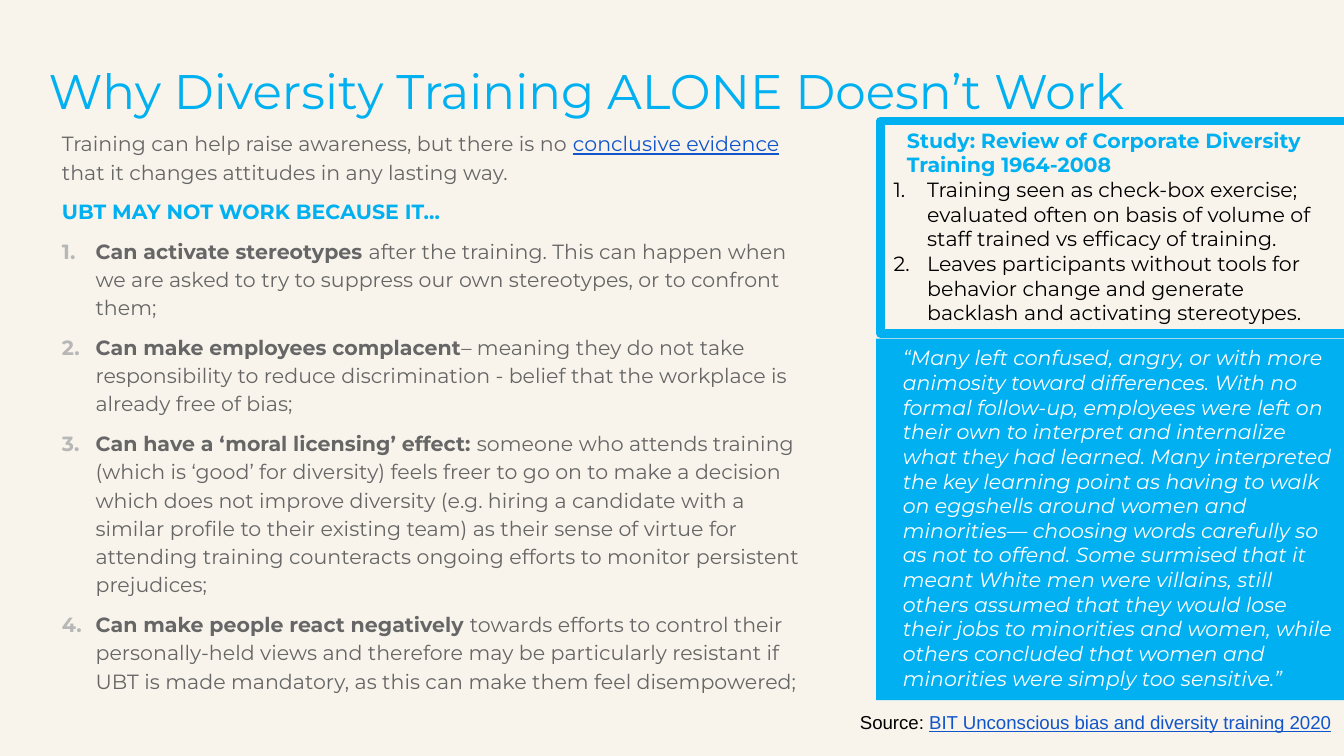
from lxml.etree import SubElement
from pptx import Presentation
from pptx.dml.color import RGBColor
from pptx.enum.shapes import MSO_SHAPE
from pptx.enum.text import MSO_ANCHOR, MSO_AUTO_SIZE, PP_ALIGN
from pptx.oxml.ns import qn
from pptx.util import Pt

CYAN, GREY, LINK = "00B0F0", "666666", "1155CC"
FONT = "Montserrat"


def color(hex_value):
    return RGBColor.from_string(hex_value)


def write(frame, paragraphs, font=FONT, size=11, line_spacing=1.0, gap=0):
    """Fill frame with (layout, runs); layout holds margin, hang and number colour."""
    frame.word_wrap = True
    frame.vertical_anchor = MSO_ANCHOR.TOP
    for index, (layout, runs) in enumerate(paragraphs):
        paragraph = frame.add_paragraph() if index else frame.paragraphs[0]
        paragraph.alignment = PP_ALIGN.LEFT
        paragraph.line_spacing = line_spacing
        paragraph.space_before = Pt(gap if index else 0)
        margin, hang, number_color = layout
        properties = paragraph._p.get_or_add_pPr()
        properties.set("marL", str(Pt(margin)))
        properties.set("indent", str(Pt(-hang)))
        if number_color:
            bullet_color = SubElement(properties, qn("a:buClr"))
            SubElement(bullet_color, qn("a:srgbClr"), val=number_color)
            SubElement(properties, qn("a:buFont"), typeface=font)
            SubElement(properties, qn("a:buAutoNum"), type="arabicPeriod")
        for text, hex_value, style in runs:
            run = paragraph.add_run()
            run.text = text
            run.font.color.rgb = color(hex_value)
            for attribute, value in {"name": font, "size": Pt(size), **style}.items():
                setattr(run.font, attribute, value)


BOLD, ITALIC, UNDERLINE = {"bold": True}, {"italic": True}, {"underline": True}
PLAIN = (7.2, 0, None)

presentation = Presentation()
presentation.slide_width, presentation.slide_height = Pt(720), Pt(405)
slide = presentation.slides.add_slide(presentation.slide_layouts[5])
slide.background.fill.solid()
slide.background.fill.fore_color.rgb = color("F8F4EB")

# Reasons
reasons = slide.shapes.add_textbox(Pt(26), Pt(68.4), Pt(409.7), Pt(327))
no_margins = dict.fromkeys(
    ["margin_left", "margin_top", "margin_right", "margin_bottom"], 0)
for attribute, value in no_margins.items():
    setattr(reasons.text_frame, attribute, value)
effects = [
    ("Can activate stereotypes ",
     "after the training. This can happen when we are asked to try to suppress "
     "our own stereotypes, or to confront them;"),
    ("Can make employees complacent",
     "– meaning they do not take responsibility to reduce discrimination - "
     "belief that the workplace is already free of bias;"),
    ("Can have a ‘moral licensing’ effect: ",
     "someone who attends training (which is ‘good’ for diversity) feels freer "
     "to go on to make a decision which does not improve diversity (e.g. hiring "
     "a candidate with a similar profile to their existing team) as their sense "
     "of virtue for attending training counteracts ongoing efforts to monitor "
     "persistent prejudices;"),
    ("Can make people react negatively ",
     "towards efforts to control their personally-held views and therefore may "
     "be particularly resistant if UBT is made mandatory, as this can make them "
     "feel disempowered;"),
]
introduction = [
    (PLAIN, [
        ("Training can help raise awareness, but there is no ", GREY, {}),
        ("conclusive evidence ", LINK, UNDERLINE),
        ("that it changes attitudes in any lasting way.", GREY, {})]),
    (PLAIN, [("UBT MAY NOT WORK BECAUSE IT…", CYAN, BOLD)]),
]
numbered_effects = [
    ((25.2, 18, "B7B7B7"), [(effect, GREY, BOLD), (explanation, GREY, {})])
    for effect, explanation in effects]
write(reasons.text_frame, introduction + numbered_effects, line_spacing=1.15, gap=6)

# Title
title = slide.shapes.title
title.left, title.top, title.width, title.height = Pt(26), Pt(20), Pt(733), Pt(57)
for attribute, value in no_margins.items():
    setattr(title.text_frame, attribute, value)
write(title.text_frame,
      [((0, 0, None), [("Why Diversity Training ALONE Doesn’t Work", CYAN, {})])],
      size=26)
title.text_frame.vertical_anchor = MSO_ANCHOR.MIDDLE
title_properties = title.text_frame.paragraphs[0].runs[0].font._element
title_effects = title_properties.makeelement(qn("a:effectLst"), {})
title_properties.find(qn("a:solidFill")).addnext(title_effects)
shadow = SubElement(title_effects, qn("a:outerShdw"), blurRad=str(Pt(3)),
                    dist=str(Pt(3)), dir="2700000", algn="tl")
shadow_color = SubElement(shadow, qn("a:srgbClr"), val="000000")
SubElement(shadow_color, qn("a:alpha"), val="40000")

# Source
source = slide.shapes.add_textbox(Pt(453.6), Pt(377.3), Pt(276.5), Pt(19.4))
write(source.text_frame, [((0, 0, None), [
    ("Source: ", "000000", {}),
    ("BIT Unconscious bias and diversity training 2020", LINK, UNDERLINE)])],
    font="Arial", size=10)

# Quotation
quotation = slide.shapes.add_shape(
    MSO_SHAPE.RECTANGLE, Pt(469.4), Pt(181.4), Pt(254.9), Pt(193.7))
quotation.fill.solid()
quotation.fill.fore_color.rgb = color(CYAN)
quotation.line.fill.background()
write(quotation.text_frame, [(PLAIN, [(
    "“Many left confused, angry, or with more animosity toward differences. With "
    "no formal follow-up, employees were left on their own to interpret and "
    "internalize what they had learned. Many interpreted the key learning point "
    "as having to walk on eggshells around women and minorities— choosing words "
    "carefully so as not to offend. Some surmised that it meant White men were "
    "villains, still others assumed that they would lose their jobs to minorities "
    "and women, while others concluded that women and minorities were simply too "
    "sensitive.”", "FFFFFF", ITALIC)])])

# Study
study = slide.shapes.add_shape(
    MSO_SHAPE.RECTANGLE, Pt(471.6), Pt(64.8), Pt(250.6), Pt(113.8))
study.fill.background()
study.line.color.rgb = color(CYAN)
study.line.width = Pt(4.5)
findings = [
    "Training seen as check-box exercise; evaluated often on basis of volume of "
    "staff trained vs efficacy of training.",
    "Leaves participants without tools for behavior change and generate backlash "
    "and activating stereotypes.",
]
write(study.text_frame, [
    (PLAIN, [("Study: Review of Corporate Diversity Training 1964-2008", CYAN, BOLD)]),
    *[((18, 18, "000000"), [(finding, "000000", {})]) for finding in findings]])

for panel in (quotation, study):
    panel.shadow.inherit = False
for growing in (source, quotation, study):
    growing.text_frame.auto_size = MSO_AUTO_SIZE.SHAPE_TO_FIT_TEXT

presentation.save("out.pptx")
